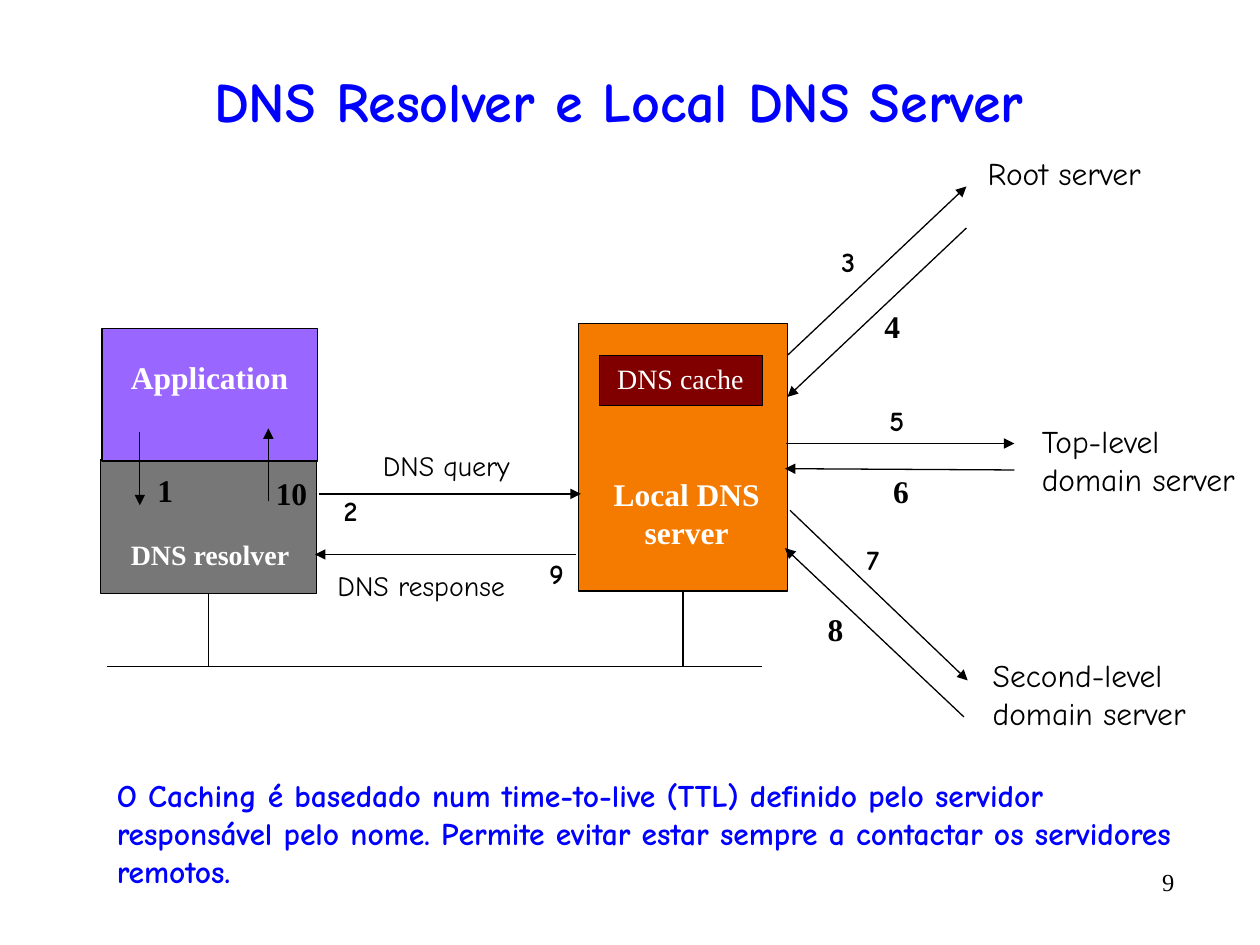
from lxml import etree
from pptx import Presentation
from pptx.dml.color import RGBColor
from pptx.enum.shapes import MSO_CONNECTOR, MSO_SHAPE
from pptx.enum.text import MSO_ANCHOR, PP_ALIGN
from pptx.oxml.ns import qn
from pptx.util import Inches, Pt

STRAIGHT = MSO_CONNECTOR.STRAIGHT
RECTANGLE = MSO_SHAPE.RECTANGLE
LEFT, CENTER, RIGHT = PP_ALIGN.LEFT, PP_ALIGN.CENTER, PP_ALIGN.RIGHT
TOP, MIDDLE = MSO_ANCHOR.TOP, MSO_ANCHOR.MIDDLE
BOTTOM_SIDE = 2

BLACK = RGBColor(0x00, 0x00, 0x00)
WHITE = RGBColor(0xFF, 0xFF, 0xFF)
BLUE = RGBColor(0x00, 0x00, 0xFF)
GRAY = RGBColor(0x77, 0x77, 0x77)
PURPLE = RGBColor(0x99, 0x66, 0xFF)
ORANGE = RGBColor(0xF4, 0x7A, 0x00)
MAROON = RGBColor(0x80, 0x00, 0x00)
COMIC, TIMES = "Comic Neue", "Times New Roman"

# Content; lengths in inches
TITLE = "DNS Resolver e Local DNS Server"
PAGE = "9"
NOTE = ("O Caching é basedado num time-to-live (TTL) definido pelo servidor "
        "responsável pelo nome. Permite evitar estar sempre a contactar os "
        "servidores remotos.")

# Name: (left, top, width, height), fill
BOXES = {
    "resolver": ((0.8, 3.65, 1.71, 1.06), GRAY),
    "application": ((0.81, 2.61, 1.71, 1.05), PURPLE),
    "local server": ((4.59, 2.57, 1.66, 2.12), ORANGE),
    "cache": ((4.76, 2.82, 1.29, 0.4), MAROON),
}

# Text, (left, top, width, height), size, bold, alignment
BOX_LABELS = [
    ("Application", (0.94, 2.79, 1.64, 0.4), 18, True, LEFT),
    ("DNS resolver", (0.94, 4.22, 1.47, 0.37), 16, True, LEFT),
    ("Local DNS\nserver", (4.77, 3.72, 1.36, 0.7), 18, True, CENTER),
    ("DNS cache", (4.8, 2.82, 1.21, 0.37), 16, False, LEFT),
]

# Text, (left, top, width, height), size
REMOTE_LABELS = [
    ("DNS query", (2.94, 3.51, 1.35, 0.37), 16),
    ("DNS response", (2.58, 4.46, 1.69, 0.37), 16),
    ("Root server", (7.74, 1.17, 1.59, 0.4), 18),
    ("Top-level\ndomain server", (8.17, 3.3, 1.85, 0.71), 18),
    ("Second-level\ndomain server", (7.78, 5.16, 1.85, 0.71), 18),
]

# Steps in order: arrow start, arrow end, number position, number font
STEPS = [
    ((1.11, 3.43), (1.11, 4.01), (1.15, 3.69), TIMES),
    ((2.53, 3.92), (4.61, 3.92), (2.63, 3.87), COMIC),
    ((6.25, 2.82), (7.67, 1.48), (6.58, 1.89), COMIC),
    ((7.67, 1.81), (6.25, 3.15), (6.92, 2.39), TIMES),
    ((6.24, 3.52), (8.05, 3.52), (6.96, 3.15), COMIC),
    ((8.05, 3.73), (6.23, 3.72), (6.99, 3.7), TIMES),
    ((6.27, 4.05), (7.68, 5.4), (6.78, 4.26), COMIC),
    ((7.65, 5.69), (6.23, 4.35), (6.47, 4.79), TIMES),
    ((4.57, 4.4), (2.5, 4.4), (4.26, 4.37), COMIC),
    ((2.13, 3.98), (2.13, 3.4), (2.09, 3.71), TIMES),
]
NUMBER_SIZES = {TIMES: 18, COMIC: 16}
NETWORK_LEFT, NETWORK_RIGHT, NETWORK_Y = 0.85, 6.05, 5.29

prs = Presentation()
prs.slide_width, prs.slide_height = Inches(10), Inches(7.5)
slide = prs.slides.add_slide(prs.slide_layouts[5])


def write(text, area, holder=None, size=18, font=COMIC, color=BLACK,
          bold=False, align=LEFT, anchor=TOP, wrap=False):
    """Put formatted text, one paragraph a line, in a holder or new text box."""
    place = [Inches(v) for v in area]
    holder = holder or slide.shapes.add_textbox(*place)
    holder.left, holder.top, holder.width, holder.height = place
    frame = holder.text_frame
    frame.text = text
    frame.word_wrap = wrap
    frame.vertical_anchor = anchor
    for paragraph in frame.paragraphs:
        paragraph.alignment = align
        for run in paragraph.runs:
            run.font.size, run.font.name = Pt(size), font
            run.font.bold, run.font.color.rgb = bold, color


def add_box(area, fill):
    box = slide.shapes.add_shape(RECTANGLE, *[Inches(v) for v in area])
    box.shadow.inherit = False
    box.fill.solid()
    box.fill.fore_color.rgb = fill
    box.line.color.rgb = BLACK
    box.line.width = Pt(0.75)
    return box


def add_line(start, end, arrow=False):
    line = slide.shapes.add_connector(
        STRAIGHT, *[Inches(v) for v in (*start, *end)])
    line.line.color.rgb = BLACK
    line.line.width = Pt(0.75)
    if arrow:
        etree.SubElement(line.line._get_or_add_ln(), qn("a:tailEnd"),
                         type="triangle")
    etree.SubElement(line._element.spPr, qn("a:effectLst"))
    return line


# Title, page number and note
write(TITLE, (0.33, 0.42, 9.17, 0.75), holder=slide.shapes.title, size=32,
      color=BLUE, bold=True, align=CENTER, anchor=MIDDLE, wrap=True)
write(PAGE, (8.42, 6.83, 1, 0.42), size=14, font=TIMES, align=RIGHT, wrap=True)
write(NOTE, (0.83, 6.11, 8.66, 1.01), color=BLUE, bold=True, wrap=True)

# Hosts and their labels
boxes = {name: add_box(*look) for name, look in BOXES.items()}
for text, area, size, bold, align in BOX_LABELS:
    write(text, area, size=size, font=TIMES, color=WHITE, bold=bold,
          align=align)
for text, area, size in REMOTE_LABELS:
    write(text, area, size=size)

# Numbered steps
for number, (start, end, corner, font) in enumerate(STEPS, 1):
    add_line(start, end, arrow=True)
    width = 0.34 if number < 10 else 0.45
    write(str(number), (*corner, width, 0.4), size=NUMBER_SIZES[font],
          font=font, bold=True)

# Shared network with a drop from each host
add_line((NETWORK_LEFT, NETWORK_Y), (NETWORK_RIGHT, NETWORK_Y))
for host in ("resolver", "local server"):
    left, top, width, height = BOXES[host][0]
    middle = left + width / 2
    drop = add_line((middle, top + height), (middle, NETWORK_Y))
    drop.begin_connect(boxes[host], BOTTOM_SIDE)

prs.save("out.pptx")
